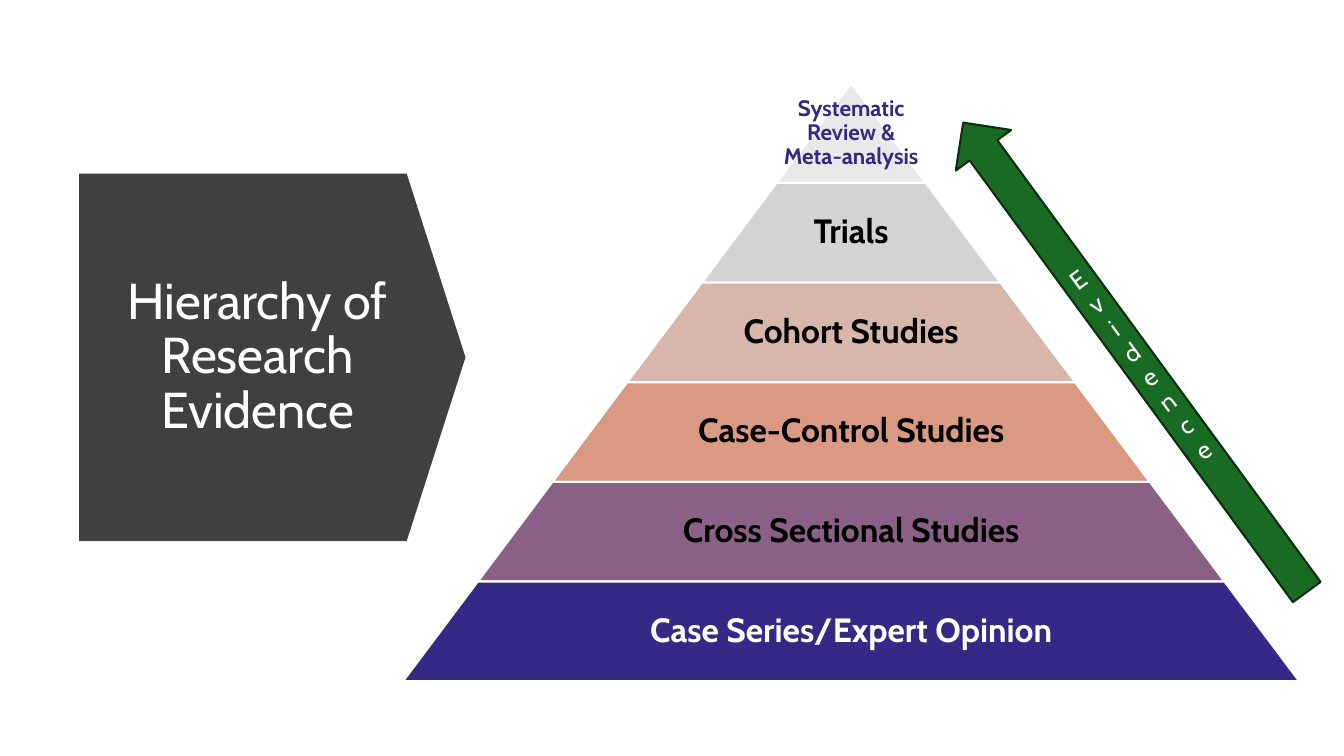
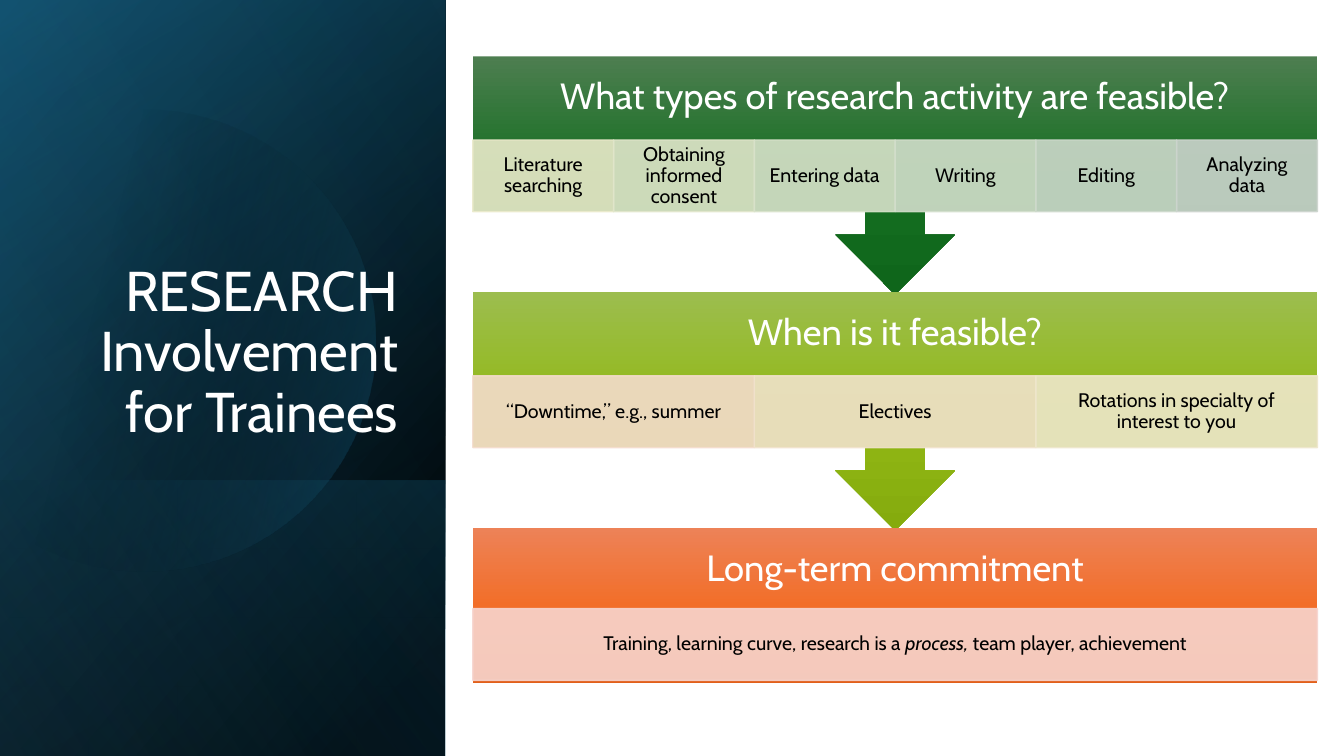
from math import acos, cos, sin

from lxml import etree
from pptx import Presentation
from pptx.dml.color import RGBColor
from pptx.enum.shapes import MSO_SHAPE as SHAPE
from pptx.enum.text import MSO_ANCHOR as ANCHOR
from pptx.enum.text import MSO_AUTO_SIZE as FIT
from pptx.enum.text import PP_ALIGN as ALIGN
from pptx.oxml.ns import qn
from pptx.util import Pt

FONT = "Cabin"
WHITE = RGBColor(0xFF, 0xFF, 0xFF)
BLACK = RGBColor(0x00, 0x00, 0x00)
CHARCOAL = RGBColor(0x40, 0x40, 0x40)
INDIGO = RGBColor(0x35, 0x29, 0x86)
PLUM = RGBColor(0x88, 0x61, 0x85)
SALMON = RGBColor(0xDA, 0x99, 0x83)
SAND = RGBColor(0xD7, 0xB6, 0xAB)
SILVER = RGBColor(0xD3, 0xD3, 0xD3)
MIST = RGBColor(0xE9, 0xE9, 0xE9)
GREEN = RGBColor(0x19, 0x6B, 0x24)
DARK_GREEN = RGBColor(0x0B, 0x2F, 0x10)
NAVY = RGBColor(0x10, 0x48, 0x62)
TEAL = RGBColor(0x15, 0x60, 0x82)
SKY = RGBColor(0x46, 0xB1, 0xE1)

# Header gradients, top to bottom
GREENS = [RGBColor(0x4D, 0x7E, 0x50), RGBColor(0x15, 0x6F, 0x21), RGBColor(0x0F, 0x66, 0x1B)]
LIMES = [RGBColor(0x9C, 0xBD, 0x4E), RGBColor(0x92, 0xB9, 0x16), RGBColor(0x85, 0xAB, 0x0D)]
ORANGES = [RGBColor(0xED, 0x82, 0x57), RGBColor(0xF2, 0x6E, 0x29), RGBColor(0xE2, 0x5F, 0x1A)]

# Label and fill of each level, from the top
LEVELS = [
    ("Systematic Review & Meta-analysis", MIST),
    ("Trials", SILVER),
    ("Cohort Studies", SAND),
    ("Case-Control Studies", SALMON),
    ("Cross Sectional Studies", PLUM),
    ("Case Series/Expert Opinion", INDIGO),
]

# Heading, gradient, cells; asterisks enclose italics
STEPS = [
    ("What types of research activity are feasible?", GREENS, [
        ("Literature searching", RGBColor(0xEA, 0xEA, 0xCA)),
        ("Obtaining informed consent", RGBColor(0xE0, 0xE6, 0xCA)),
        ("Entering data", RGBColor(0xD8, 0xE2, 0xCA)),
        ("Writing", RGBColor(0xD2, 0xDE, 0xCB)),
        ("Editing", RGBColor(0xCD, 0xD9, 0xCB)),
        ("Analyzing data", RGBColor(0xCC, 0xD4, 0xCD)),
    ]),
    ("When is it feasible?", LIMES, [
        ("“Downtime,” e.g., summer", RGBColor(0xF4, 0xDC, 0xCC)),
        ("Electives", RGBColor(0xF1, 0xE2, 0xCB)),
        ("Rotations in specialty of interest to you", RGBColor(0xEE, 0xE7, 0xCB)),
    ]),
    ("Long-term commitment", ORANGES, [
        ("Training, learning curve, research is a *process,* team player, achievement",
         RGBColor(0xF7, 0xD5, 0xCE)),
    ]),
]


def write(sp, text, size, color, bold=False, align=ALIGN.CENTER,
          anchor=ANCHOR.MIDDLE, margins=None, spacing=0.9):
    """Fill a shape with one paragraph; margins are left, top, right, bottom."""
    tf = sp.text_frame
    tf.word_wrap = True
    tf.auto_size = FIT.NONE
    tf.vertical_anchor = anchor
    if margins:
        tf.margin_left, tf.margin_top, tf.margin_right, tf.margin_bottom = map(Pt, margins)
    p = tf.paragraphs[0]
    p.alignment = align
    p.line_spacing = spacing
    for i, part in enumerate(text.split("*")):
        r = p.add_run()
        r.text = part
        r.font.name = FONT
        r.font.size = Pt(size)
        r.font.bold = bold
        r.font.italic = i % 2 == 1
        r.font.color.rgb = color


def add_alpha(color_el, percent):
    etree.SubElement(color_el, qn("a:alpha"), val=str(percent * 1000))


def fill_gradient(sp, stops, angle):
    """Stops are (position, colour, opacity), all in percent."""
    sp.fill.background()
    grad = etree.Element(qn("a:gradFill"), rotWithShape="1")
    stop_list = etree.SubElement(grad, qn("a:gsLst"))
    for pos, color, opacity in stops:
        gs = etree.SubElement(stop_list, qn("a:gs"), pos=str(pos * 1000))
        clr = etree.SubElement(gs, qn("a:srgbClr"), val=str(color))
        if opacity < 100:
            add_alpha(clr, opacity)
    etree.SubElement(grad, qn("a:lin"), ang=str(angle * 60000), scaled="0")
    sp_pr = sp.element.spPr
    sp_pr.replace(sp_pr.find(qn("a:noFill")), grad)


def add_shape(s, kind, x, y, w, h, fill=None, line=None, line_width=1.5):
    sp = s.shapes.add_shape(kind, Pt(x), Pt(y), Pt(w), Pt(h))
    sp.shadow.inherit = False
    if fill is not None:
        sp.fill.solid()
        sp.fill.fore_color.rgb = fill
    if line is None:
        sp.line.fill.background()
    else:
        sp.line.color.rgb = line
        sp.line.width = Pt(line_width)
    return sp


def place_title(s, text, x, y, w, h, size, **style):
    """Format the title placeholder and bring it in front of its panel."""
    title = s.shapes.title
    title.left, title.top, title.width, title.height = Pt(x), Pt(y), Pt(w), Pt(h)
    write(title, text, size, WHITE, **style)
    title.element.getparent().append(title.element)


def title_tag(s, x, y, w, h):
    tag = add_shape(s, SHAPE.PENTAGON, x, y, w, h, CHARCOAL)
    tag.adjustments[0] = 0.16
    place_title(s, "Hierarchy of Research Evidence", x + 24, y + 31, 207, h - 62, 36)


def pyramid(s, x, y, w, h):
    level_h = h / len(LEVELS)
    step = w / len(LEVELS)
    for i, (label, color) in enumerate(LEVELS):
        level_w = step * (i + 1)
        left, top = x + (w - level_w) / 2, y + i * level_h
        level = add_shape(s, SHAPE.TRAPEZOID, left, top, level_w, level_h, color, WHITE)
        level.adjustments[0] = step / 2 / level_h
        # The tip label may overhang; the others stay inside the slopes
        inset = 0 if i == 0 else level_w * 0.175
        box = s.shapes.add_textbox(Pt(left + inset), Pt(top),
                                   Pt(level_w - 2 * inset), Pt(level_h))
        size, ink = (16, INDIGO) if i == 0 else (24, BLACK)
        if color == INDIGO:
            ink = WHITE
        write(box, label, size, ink, bold=True, margins=(2, 2, 2, 2))


def evidence_arrow(s, x, y, w, h):
    arrow = add_shape(s, SHAPE.UP_ARROW, x, y, w, h, GREEN, DARK_GREEN)
    arrow.rotation = 323.8
    write(arrow, "Evidence", 18, WHITE, spacing=1.0)


def turned_gradient(s, x, y, w, h, stops, angle):
    """Mirrored rectangle turned a quarter that covers the given box."""
    sp = add_shape(s, SHAPE.RECTANGLE, x + (w - h) / 2, y + (h - w) / 2, h, w)
    sp.rotation = 90
    sp.element.spPr.xfrm.set("flipH", "1")
    fill_gradient(sp, stops, angle)


def glow_disc(s, x, cx, cy, radius):
    """Disc cut off at the left edge x."""
    limit, count = acos((x - cx) / radius), 90
    angles = [limit * (2 * i / count - 1) for i in range(count + 1)]
    points = [(Pt(cx + radius * cos(a)), Pt(cy + radius * sin(a))) for a in angles]
    builder = s.shapes.build_freeform(*points[0])
    builder.add_line_segments(points[1:], close=True)
    sp = builder.convert_to_shape()
    sp.shadow.inherit = False
    sp.line.fill.background()
    fill_gradient(sp, [(29, BLACK, 0), (100, TEAL, 43)], 14)


def title_panel(s, x, y, w, h):
    turned_gradient(s, x, y, w, h, [(8, BLACK, 100), (100, NAVY, 100)], 50)
    turned_gradient(s, x, y, w, h, [(0, BLACK, 0), (99, TEAL, 46)], 30)
    foot_h = 197
    turned_gradient(s, x, y + h - foot_h, w, foot_h,
                    [(2, TEAL, 29), (100, BLACK, 30)], 130)
    glow_disc(s, x, x + 103, y + 243, 165)
    turned_gradient(s, x, y, w, h, [(0, BLACK, 0), (99, SKY, 11)], 120)
    place_title(s, "RESEARCH Involvement for Trainees", x + 46, y + 132.5, 245.5, 188.5,
                40, align=ALIGN.RIGHT, anchor=ANCHOR.BOTTOM)


def cell_row(s, x, y, w, h, cells):
    cell_w = w / len(cells)
    for i, (text, color) in enumerate(cells):
        cell = add_shape(s, SHAPE.RECTANGLE, x + i * cell_w, y, cell_w, h, color, color, 1)
        for clr in cell.element.spPr.findall(".//" + qn("a:srgbClr")):
            add_alpha(clr, 90)
        write(cell, text, 14, BLACK, margins=(8, 1.5, 8, 1.5))


def step_flow(s, x, y, w, pitch):
    body_h, cell_h = 110.75, 51.25
    for i, (heading, colors, cells) in enumerate(STEPS):
        top = y + i * pitch
        last = i == len(STEPS) - 1
        kind = SHAPE.RECTANGLE if last else SHAPE.DOWN_ARROW_CALLOUT
        block = add_shape(s, kind, x, top, w, body_h if last else pitch + 1.5)
        fill_gradient(block, [(50 * k, c, 100) for k, c in enumerate(colors)], 90)
        write(block, heading, 26, WHITE, margins=(14, 0, 14, cell_h))
        cell_top = top + (57.5 if last else 59.75)
        cell_row(s, x, cell_top, w, cell_h, cells)


def hierarchy_slide(prs):
    s = prs.slides.add_slide(prs.slide_layouts[5])
    title_tag(s, 56.5, 124, 276, 262.5)
    pyramid(s, 288, 59.5, 640, 427)
    evidence_arrow(s, 786.25, 47.5, 49, 415.5)


def involvement_slide(prs):
    s = prs.slides.add_slide(prs.slide_layouts[5])
    title_panel(s, 0, 0, 318, 540)
    step_flow(s, 337.75, 40.25, 603.25, 168.5)


def main():
    prs = Presentation()
    prs.slide_width, prs.slide_height = Pt(960), Pt(540)
    hierarchy_slide(prs)
    involvement_slide(prs)
    prs.save("out.pptx")


if __name__ == "__main__":
    main()
